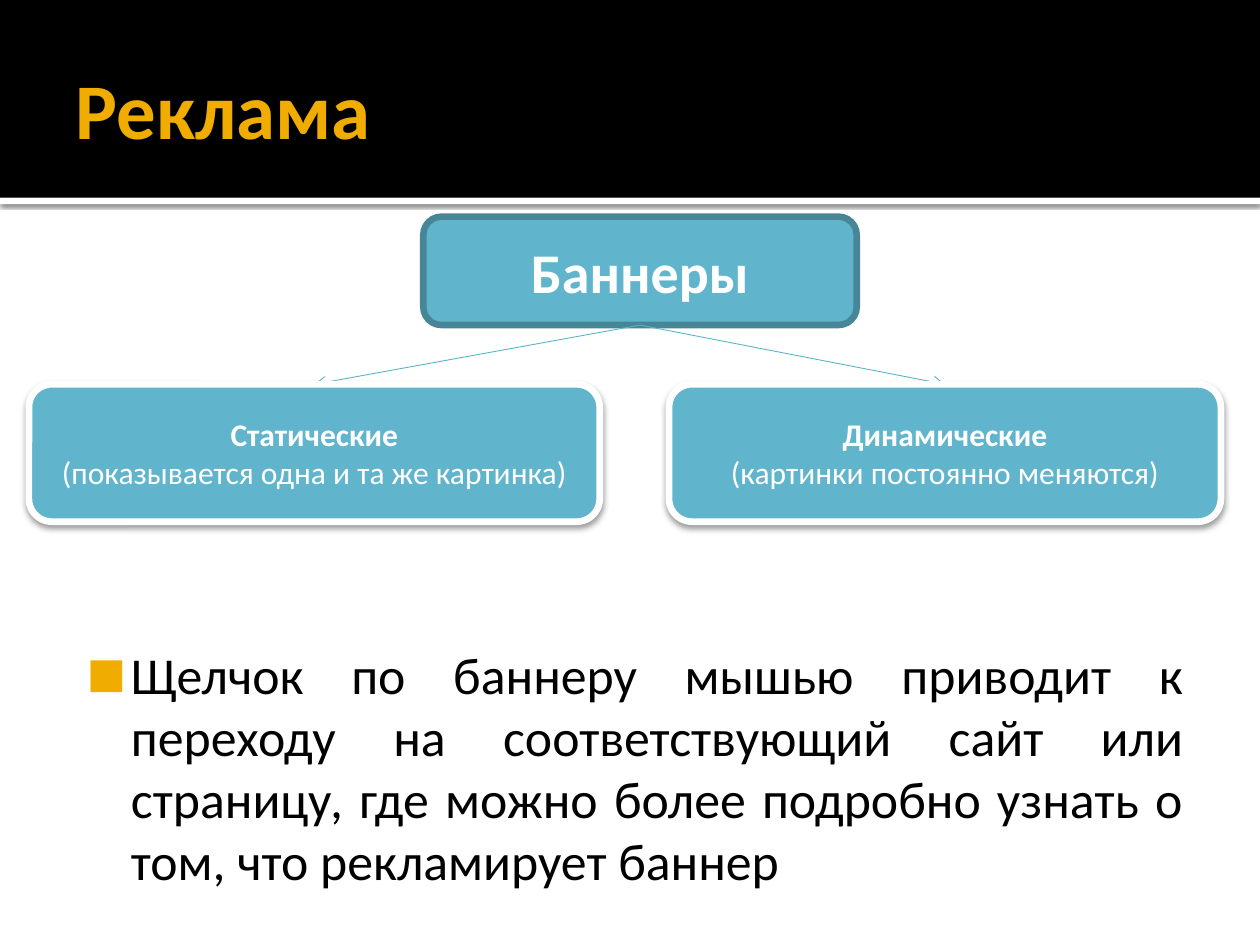
from dataclasses import dataclass

from lxml.etree import SubElement
from pptx import Presentation
from pptx.dml.color import RGBColor as Rgb
from pptx.enum.shapes import MSO_CONNECTOR as Link, MSO_SHAPE as Preset
from pptx.enum.text import MSO_ANCHOR as Anchor, PP_ALIGN as Align
from pptx.oxml.ns import qn
from pptx.util import Inches, Pt

# Content
TITLE = "Реклама"
ROOT = "Баннеры"
KINDS = [
    ("Статические", "(показывается одна и та же картинка)"),
    ("Динамические", "(картинки постоянно меняются)"),
]
NOTE = ("Щелчок по баннеру мышью приводит к переходу на соответствующий сайт или "
        "страницу, где можно более подробно узнать о том, что рекламирует баннер")


@dataclass(frozen=True)
class Theme:
    font: str = "Calibri"
    black: str = "000000"
    white: str = "FFFFFF"
    accent: str = "F0AD00"
    box: str = "60B5CC"
    edge: str = "478697"
    arrow: str = "5BB3CA"
    title_size: float = 45
    root_size: float = 32
    kind_size: float = 18
    note_size: float = 29.6


THEME = Theme()

# Grid, in inches
WIDTH, HEIGHT = 10, 7.5
MARGIN = WIDTH / 20
CONTENT = WIDTH - 2 * MARGIN
BAND = 1.57
ROOT_AREA = (3.36, 1.72, 3.44, 0.86)
KIND_TOP, KIND_HEIGHT = 3.05, 1.09
KIND_SPANS = [(0.23, 4.53), (5.31, 4.38)]


def inches(*lengths):
    return [Inches(length) for length in lengths]


def add_span(para, text, size, color, bold=False):
    span = para.add_run()
    span.text = text
    font = span.font
    font.name, font.size, font.bold = THEME.font, Pt(size), bold
    font.color.rgb = Rgb.from_string(color)


def set_insets(frame, left, top, right, bottom):
    frame.margin_left, frame.margin_top, frame.margin_right, frame.margin_bottom = inches(
        left, top, right, bottom)


def add_box(page, preset, area, fill, line=None, shadow=None):
    box = page.shapes.add_shape(preset, *inches(*area))
    box.fill.solid()
    box.fill.fore_color.rgb = Rgb.from_string(fill)
    if line:
        color, width = line
        box.line.color.rgb = Rgb.from_string(color)
        box.line.width = Pt(width)
    else:
        box.line.fill.background()
    box.shadow.inherit = False
    if shadow:
        alpha, blur, distance = shadow
        effects = box.element.spPr.find(qn("a:effectLst"))
        outer = SubElement(effects, qn("a:outerShdw"), blurRad=str(Pt(blur)),
                           dist=str(Pt(distance)), dir="5400000", rotWithShape="0")
        color = SubElement(outer, qn("a:srgbClr"), val=THEME.black)
        SubElement(color, qn("a:alpha"), val=str(alpha * 1000))
    return box


def add_label(page, area, lines, size, line, shadow=None):
    """Rounded box whose first line is bold."""
    box = add_box(page, Preset.ROUNDED_RECTANGLE, area, THEME.box, line, shadow)
    frame = box.text_frame
    frame.word_wrap = True
    frame.vertical_anchor = Anchor.MIDDLE
    for number, text in enumerate(lines):
        para = frame.add_paragraph() if number else frame.paragraphs[0]
        para.alignment = Align.CENTER
        add_span(para, text, size, THEME.white, bold=number == 0)
    return box


def add_arrow(page, parent, child):
    arrow = page.shapes.add_connector(Link.STRAIGHT, 0, 0, 0, 0)
    arrow.begin_connect(parent, 2)
    arrow.end_connect(child, 0)
    arrow.line.color.rgb = Rgb.from_string(THEME.arrow)
    arrow.line.width = Pt(0.5)
    properties = arrow.element.spPr
    SubElement(properties.find(qn("a:ln")), qn("a:tailEnd"), type="arrow")
    SubElement(properties, qn("a:effectLst"))


def add_bullet(para):
    properties = para._p.get_or_add_pPr()
    properties.set("marL", str(Inches(0.48)))
    properties.set("indent", str(Inches(-0.35)))
    color = SubElement(properties, qn("a:buClr"))
    SubElement(color, qn("a:srgbClr"), val=THEME.accent)
    SubElement(properties, qn("a:buSzPct"), val="80000")
    SubElement(properties, qn("a:buFont"), typeface=THEME.font)
    SubElement(properties, qn("a:buChar"), char="■")


def main():
    deck = Presentation()
    deck.slide_width, deck.slide_height = inches(WIDTH, HEIGHT)
    page = deck.slides.add_slide(deck.slide_layouts[5])

    # Header band, behind the title
    stripe = add_box(page, Preset.RECTANGLE, (0, BAND, WIDTH, 0.05), THEME.white,
                     shadow=(60, 2.5, 0.8))
    band = add_box(page, Preset.RECTANGLE, (0, 0, WIDTH, BAND), THEME.black)
    title = page.shapes.title
    for part in (stripe, band):
        title.element.addprevious(part.element)

    # Title
    title.left, title.top, title.width, title.height = inches(MARGIN, 0.17, CONTENT, 1.37)
    frame = title.text_frame
    frame.vertical_anchor = Anchor.MIDDLE
    set_insets(frame, 0.1, 0.05, 0.05, 0.05)
    para = frame.paragraphs[0]
    para.alignment = Align.LEFT
    add_span(para, TITLE, THEME.title_size, THEME.accent, bold=True)

    # Note
    note = page.shapes.add_textbox(*inches(MARGIN, 5, CONTENT, 2))
    frame = note.text_frame
    frame.word_wrap = True
    set_insets(frame, 0.06, 0.1, 0.1, 0.05)
    para = frame.paragraphs[0]
    para.alignment = Align.JUSTIFY
    add_bullet(para)
    add_span(para, NOTE, THEME.note_size, THEME.black)

    # Banner tree
    root = add_label(page, ROOT_AREA, [ROOT], THEME.root_size, (THEME.edge, 3.78))
    for (left, width), lines in zip(KIND_SPANS, KINDS):
        kind = add_label(page, (left, KIND_TOP, width, KIND_HEIGHT), lines,
                         THEME.kind_size, (THEME.white, 3.82), (38, 3.5, 2))
        add_arrow(page, root, kind)
        kind.element.getparent().append(kind.element)

    deck.save("out.pptx")


if __name__ == "__main__":
    main()
